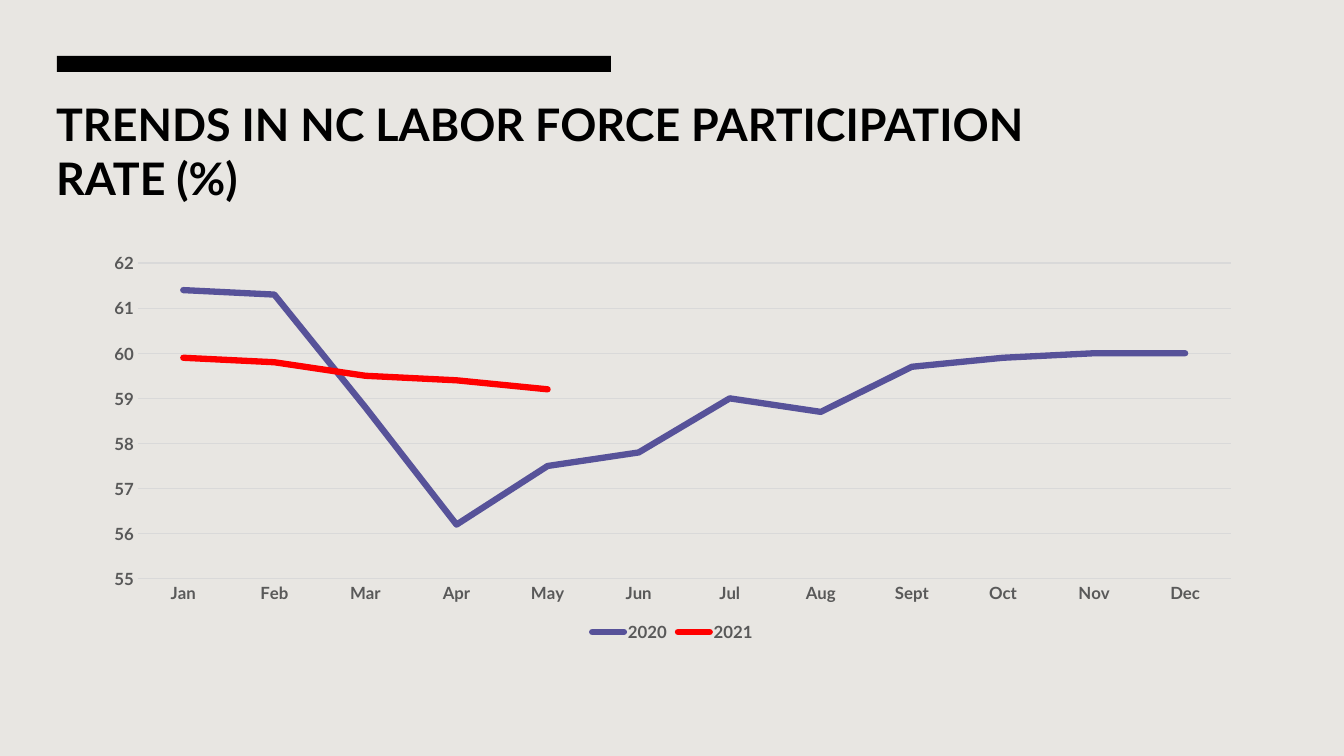
from pptx import Presentation
from pptx import util as u
from pptx.chart import data as cd
from pptx.dml.color import RGBColor
from pptx.enum import chart as ch, shapes, text

SCALE = 914400 / 100.8
FONT = "Lato"
BACK = RGBColor(0xE8, 0xE6, 0xE2)
BLACK = RGBColor(0, 0, 0)
GREY = RGBColor(0x59, 0x59, 0x59)
GRID = RGBColor(0xD9, 0xD9, 0xD9)
PURPLE = RGBColor(0x57, 0x52, 0x99)
RED = RGBColor(0xFF, 0, 0)

MONTHS = ["Jan", "Feb", "Mar", "Apr", "May", "Jun",
          "Jul", "Aug", "Sept", "Oct", "Nov", "Dec"]
RATES = {
    "2020": (PURPLE, [61.4, 61.3, 58.8, 56.2, 57.5, 57.8,
                      59, 58.7, 59.7, 59.9, 60, 60]),
    "2021": (RED, [59.9, 59.8, 59.5, 59.4, 59.2] + [None] * 7),
}


def px(*vals):
    return [u.Emu(round(v * SCALE)) for v in vals]


def style(font, size, color, bold=True):
    font.name = FONT
    font.size = u.Pt(size)
    font.bold = bold
    font.color.rgb = color


def stroke(line, color, width):
    line.color.rgb = color
    line.width = u.Pt(width)


def add_bar(slide, *box):
    bar = slide.shapes.add_shape(shapes.MSO_SHAPE.RECTANGLE, *px(*box))
    bar.shadow.inherit = False
    bar.fill.solid()
    bar.fill.fore_color.rgb = BLACK
    bar.line.fill.background()


def set_title(slide, words, *box):
    title = slide.shapes.title
    title.left, title.top, title.width, title.height = px(*box)
    frame = title.text_frame
    frame.word_wrap = True
    frame.auto_size = text.MSO_AUTO_SIZE.NONE
    frame.vertical_anchor = text.MSO_ANCHOR.MIDDLE
    para = frame.paragraphs[0]
    para.alignment = text.PP_ALIGN.LEFT
    run = para.add_run()
    run.text = words
    style(run.font, 32, BLACK)


def set_axes(chart):
    months, rates = chart.category_axis, chart.value_axis
    for axis in (months, rates):
        axis.major_tick_mark = axis.minor_tick_mark = ch.XL_TICK_MARK.NONE
        style(axis.tick_labels.font, 12, GREY)
    stroke(months.format.line, GRID, 0.75)
    rates.format.line.fill.background()
    rates.minimum_scale = 55
    rates.has_major_gridlines = True
    stroke(rates.major_gridlines.format.line, GRID, 0.75)


def add_lines(slide, *box):
    data = cd.CategoryChartData()
    data.categories = MONTHS
    for year, (_, vals) in RATES.items():
        data.add_series(year, vals)
    frame = slide.shapes.add_chart(ch.XL_CHART_TYPE.LINE, *px(*box), data)
    chart = frame.chart
    chart.has_title = False
    style(chart.font, 10, BLACK, False)
    set_axes(chart)

    chart.has_legend = True
    chart.legend.position = ch.XL_LEGEND_POSITION.BOTTOM
    chart.legend.include_in_layout = False
    style(chart.legend.font, 12, GREY)

    plot = chart.plots[0]
    plot.vary_by_categories = False
    for line in plot.series:
        line.smooth = False
        line.marker.style = ch.XL_MARKER_STYLE.NONE
        stroke(line.format.line, RATES[line.name][0], 4.5)
        for ln in line._element.xpath("c:spPr/a:ln"):
            ln.set("cap", "rnd")


def main():
    deck = Presentation()
    deck.slide_width, deck.slide_height = px(1344, 756)
    slide = deck.slides.add_slide(deck.slide_layouts[5])
    slide.background.fill.solid()
    slide.background.fill.fore_color.rgb = BACK
    add_bar(slide, 57, 56, 554, 16)
    set_title(slide, "TRENDS IN NC LABOR FORCE PARTICIPATION RATE (%)",
              46, 88, 1055, 126)
    add_lines(slide, 91, 245, 1163, 401)
    deck.save("out.pptx")


if __name__ == "__main__":
    main()
